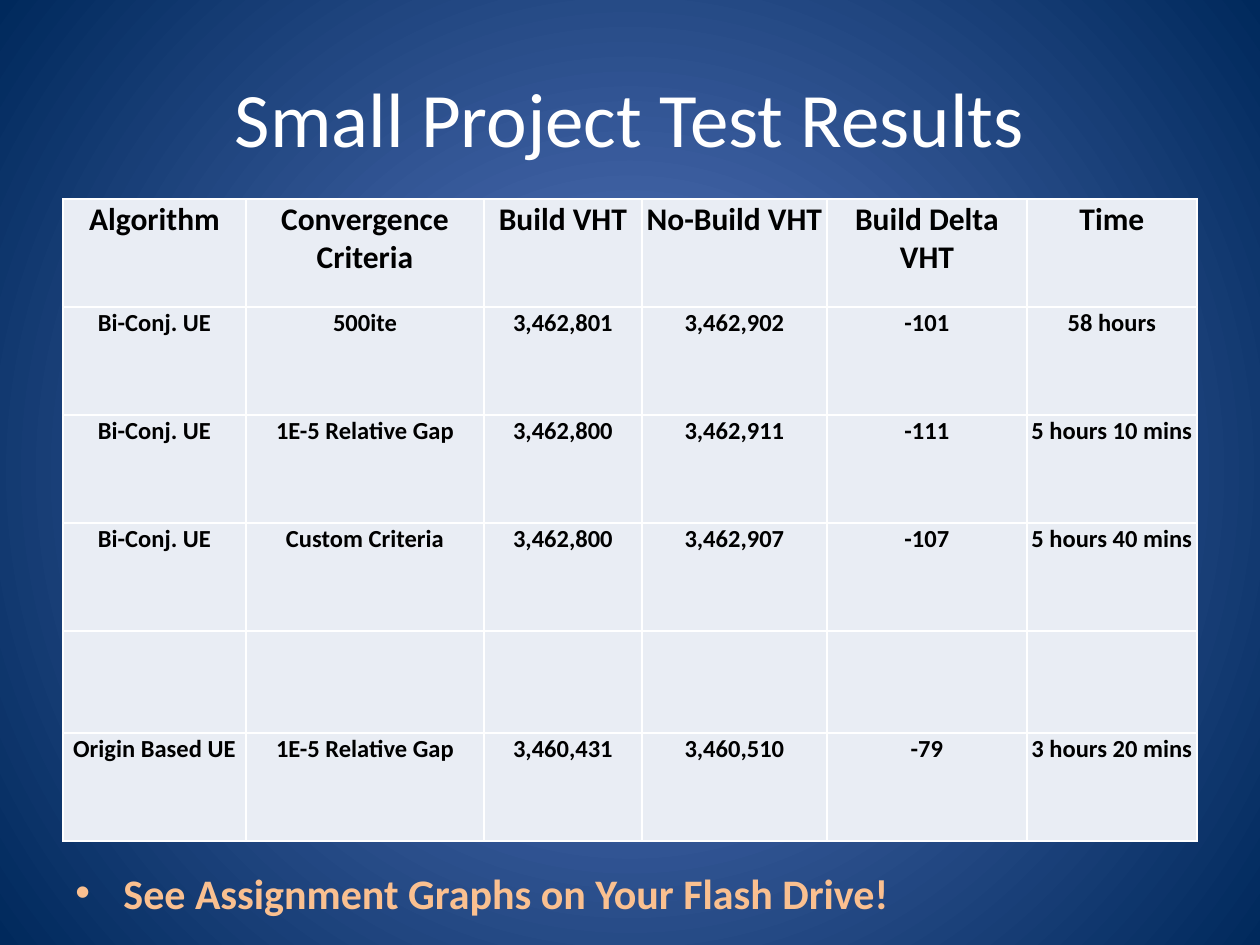
from dataclasses import dataclass

from lxml import etree
from pptx import Presentation
from pptx import util as u
from pptx.dml.color import RGBColor
from pptx.enum import text
from pptx.oxml import ns

EMU_PER_PX = 914400 / 126
FONT = "Calibri"
COLORS = {
    "glow": "5E7CC5",
    "navy": "00295C",
    "white": "FFFFFF",
    "black": "000000",
    "cell": "E9EDF4",
    "peach": "FAC090",
}


@dataclass(frozen=True)
class Box:
    x: int
    y: int
    w: int
    h: int


@dataclass(frozen=True)
class Column:
    heading: str
    width: int
    values: tuple[str, ...]


# The fourth body row is a blank divider
COLUMNS = [
    Column("Algorithm", 183,
           ("Bi-Conj. UE", "Bi-Conj. UE", "Bi-Conj. UE", "", "Origin Based UE")),
    Column("Convergence Criteria", 238,
           ("500ite", "1E-5 Relative Gap", "Custom Criteria", "", "1E-5 Relative Gap")),
    Column("Build VHT", 158,
           ("3,462,801", "3,462,800", "3,462,800", "", "3,460,431")),
    Column("No-Build VHT", 185,
           ("3,462,902", "3,462,911", "3,462,907", "", "3,460,510")),
    Column("Build Delta VHT", 200, ("-101", "-111", "-107", "", "-79")),
    Column("Time", 170,
           ("58 hours", "5 hours 10 mins", "5 hours 40 mins", "", "3 hours 20 mins")),
]
ROW_HEIGHTS = [108, 108, 108, 108, 102, 108]


def px(n: int) -> u.Emu:
    return u.Emu(round(n * EMU_PER_PX))


def rgb(name: str) -> RGBColor:
    return RGBColor.from_string(COLORS[name])


def write(tf, content: str, *, size: int, color: str, bold: bool = False,
          align=text.PP_ALIGN.LEFT):
    """Put one formatted run into the first paragraph and return the paragraph."""
    p = tf.paragraphs[0]
    p.alignment = align
    p.font.size = u.Pt(size)
    if content:
        r = p.add_run()
        r.text = content
        r.font.name, r.font.size, r.font.bold = FONT, u.Pt(size), bold
        r.font.color.rgb = rgb(color)
    else:
        end = etree.SubElement(p._p, ns.qn("a:endParaRPr"))
        end.set("sz", str(size * 100))
    return p


def add_text(s, box: Box, content: str, *, anchor=text.MSO_ANCHOR.TOP, **fmt):
    sp = s.shapes.add_textbox(px(box.x), px(box.y), px(box.w), px(box.h))
    tf = sp.text_frame
    tf.word_wrap = True
    tf.vertical_anchor = anchor
    return write(tf, content, **fmt)


def add_bullet(p, indent: int) -> None:
    pPr = p._p.get_or_add_pPr()
    pPr.set("marL", str(px(indent)))
    pPr.set("indent", str(-px(indent)))
    font = etree.Element(ns.qn("a:buFont"), typeface="Arial")
    char = etree.Element(ns.qn("a:buChar"), char="•")
    pPr.insert(0, font)
    pPr.insert(1, char)


def set_background(s) -> None:
    """Radial gradient, light in the middle."""
    fill = s.background.fill
    fill.gradient()
    for stop, name, pos in zip(fill.gradient_stops, ("glow", "navy"), (0, 1)):
        stop.color.rgb = rgb(name)
        stop.position = pos
    lin = next(s.element.iter(ns.qn("a:lin")))
    circle = etree.Element(ns.qn("a:path"), {"path": "circle"})
    etree.SubElement(circle, ns.qn("a:fillToRect"),
                     dict.fromkeys("ltrb", "50000"))
    lin.getparent().replace(lin, circle)


def add_borders(cell, color: str, points: int) -> None:
    tcPr = cell._tc.get_or_add_tcPr()
    for i, side in enumerate(("lnL", "lnR", "lnT", "lnB")):
        ln = etree.Element(ns.qn(f"a:{side}"), w=str(u.Pt(points)))
        solid = etree.SubElement(ln, ns.qn("a:solidFill"))
        etree.SubElement(solid, ns.qn("a:srgbClr"), val=COLORS[color])
        tcPr.insert(i, ln)


def fill_cell(cell, content: str, size: int) -> None:
    cell.fill.solid()
    cell.fill.fore_color.rgb = rgb("cell")
    cell.margin_left = cell.margin_right = cell.margin_top = px(1)
    cell.margin_bottom = 0
    write(cell.text_frame, content, size=size, color="black", bold=True,
          align=text.PP_ALIGN.CENTER)
    add_borders(cell, "white", 1)


def add_results(s, x: int, y: int, columns: list[Column], heights: list[int]) -> None:
    width = sum(c.width for c in columns)
    table = s.shapes.add_table(len(heights), len(columns), px(x), px(y),
                               px(width), px(sum(heights))).table
    for row, height in zip(table.rows, heights):
        row.height = px(height)
    for j, column in enumerate(columns):
        table.columns[j].width = px(column.width)
        for i, content in enumerate((column.heading, *column.values)):
            fill_cell(table.cell(i, j), content, 14 if i else 18)


def main() -> None:
    prs = Presentation()
    prs.slide_width, prs.slide_height = px(1260), px(945)
    s = prs.slides.add_slide(prs.slide_layouts[6])
    set_background(s)

    # Title
    add_text(s, Box(63, 38, 1134, 158), "Small Project Test Results",
             size=44, color="white", align=text.PP_ALIGN.CENTER,
             anchor=text.MSO_ANCHOR.MIDDLE)

    # Results table
    add_results(s, 63, 199, COLUMNS, ROW_HEIGHTS)

    # Closing note
    note = add_text(s, Box(63, 861, 1092, 63),
                    "See Assignment Graphs on Your Flash Drive!",
                    size=24, color="peach", bold=True)
    add_bullet(note, 48)

    prs.save("out.pptx")


if __name__ == "__main__":
    main()
